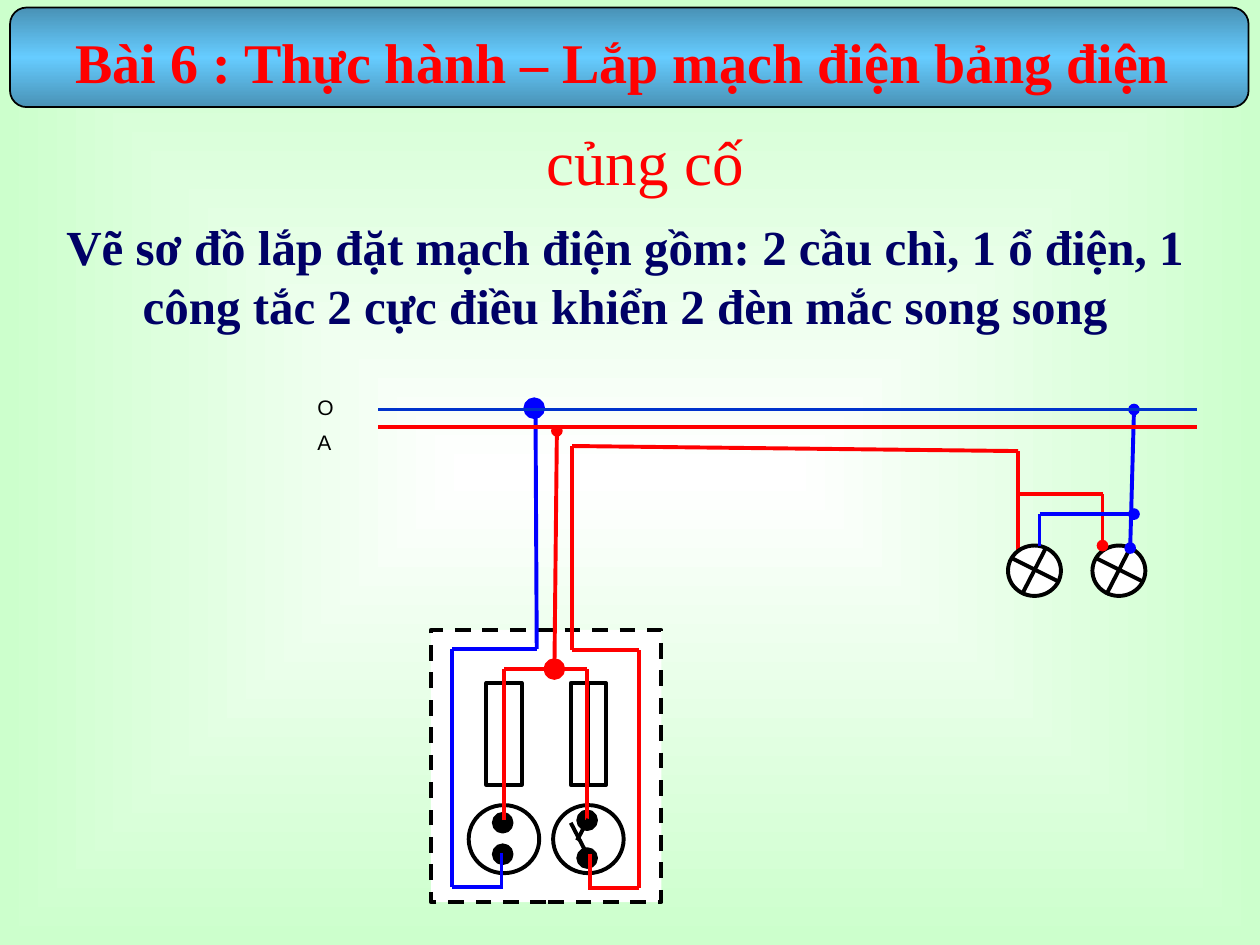
from dataclasses import dataclass
from itertools import pairwise
from typing import Any, NamedTuple

from lxml.etree import SubElement
from pptx import Presentation
from pptx.dml.color import RGBColor
from pptx.enum.dml import MSO_LINE
from pptx.enum.shapes import MSO_CONNECTOR, MSO_SHAPE
from pptx.enum.text import PP_ALIGN
from pptx.oxml.ns import qn
from pptx.util import Inches, Pt


@dataclass(frozen=True)
class Theme:
    black: str = "000000"
    white: str = "FFFFFF"
    red: str = "FF0000"
    blue: str = "0000FF"
    mains_blue: str = "0033CC"
    navy: str = "000066"
    mint: str = "CCFFCC"
    steel: str = "4992B6"
    sky: str = "66CCFF"
    serif: str = "Times New Roman"
    sans: str = "Arial"
    title_size: float = 32
    heading_size: float = 36
    task_size: float = 28
    label_size: float = 12
    stroke: float = 2.25
    thin_stroke: float = 1.5
    frame_stroke: float = 1


THEME = Theme()


class Point(NamedTuple):
    x: float
    y: float


class Area(NamedTuple):
    left: float
    top: float
    width: float
    height: float


class Wire(NamedTuple):
    color: str
    points: tuple[tuple[float, float], ...]
    head: bool = False
    tail: bool = False


@dataclass(frozen=True)
class Label:
    area: Area
    lines: tuple[str, ...]
    size: float
    color: str
    font: str = THEME.serif
    bold: bool = False
    align: PP_ALIGN = PP_ALIGN.CENTER
    wrap: bool = True
    margin_left: float = 0.1


LABELS = (
    Label(Area(0.17, 0.17, 9.83, 0.63), ("Bài 6 : Thực hành – Lắp mạch điện bảng điện",),
          THEME.title_size, THEME.red, bold=True, align=PP_ALIGN.JUSTIFY, margin_left=0.43),
    Label(Area(2.58, 0.92, 5.08, 0.66), ("củng cố",), THEME.heading_size, THEME.red, wrap=False),
    Label(Area(0.42, 1.67, 9.08, 1.03),
          ("Vẽ sơ đồ lắp đặt mạch điện gồm: 2 cầu chì, 1 ổ điện, 1 công tắc 2 cực "
           "điều khiển 2 đèn mắc song song",), THEME.task_size, THEME.navy, bold=True),
    Label(Area(2.42, 3.08, 0.67, 0.6), ("O", "A"), THEME.label_size, THEME.black,
          THEME.sans, align=PP_ALIGN.LEFT),
)

SUPPLY_WIRES = (
    Wire(THEME.blue, ((9, 3.25), (8.97, 4.35)), True, True),
    Wire(THEME.blue, ((4.25, 3.25), (4.26, 5.15), (3.59, 5.15), (3.59, 7.04), (3.99, 7.04))),
    Wire(THEME.red, ((4.42, 3.42), (4.4, 5.33)), True, True),
    Wire(THEME.red, ((8.08, 4.39), (8.08, 3.58), (4.54, 3.54), (4.54, 5.16),
                     (5.07, 5.16), (5.07, 7.05), (4.67, 7.05))),
)
MAINS_WIRES = (
    Wire(THEME.red, ((3, 3.39), (9.5, 3.39))),
    Wire(THEME.mains_blue, ((3, 3.25), (9.5, 3.25))),
)
BOARD_WIRES = (
    Wire(THEME.red, ((4, 6.51), (4, 5.31), (4.66, 5.31), (4.66, 6.51))),
    Wire(THEME.blue, ((3.98, 6.77), (3.98, 7.04))),
    Wire(THEME.red, ((4.68, 6.78), (4.68, 7.05))),
    Wire(THEME.black, ((4.58, 6.67), (4.67, 6.5))),
)
LAMP_WIRES = (
    Wire(THEME.red, ((8.08, 3.92), (8.75, 3.92), (8.75, 4.33)), tail=True),
    Wire(THEME.blue, ((8.25, 4.33), (8.25, 4.08), (9, 4.08)), tail=True),
)


def apply(target: Any, values: dict[str, Any]) -> None:
    for name, value in values.items():
        setattr(target, name, value)


def set_gradient(owner: Any, fill: Any, colors: tuple[str, ...], radial: bool = False) -> None:
    fill.gradient()
    gradient = next(owner.iter(qn("a:gradFill")))
    for child in list(gradient):
        gradient.remove(child)
    stops = SubElement(gradient, qn("a:gsLst"))
    for index, color in enumerate(colors):
        position = 100000 * index // (len(colors) - 1)
        stop = SubElement(stops, qn("a:gs"), pos=str(position))
        SubElement(stop, qn("a:srgbClr"), val=color)
    if radial:
        shade = SubElement(gradient, qn("a:path"), {"path": "shape"})
        SubElement(shade, qn("a:fillToRect"), dict.fromkeys("ltrb", "50000"))
    else:
        SubElement(gradient, qn("a:lin"), ang="5400000", scaled="1")


def add_figure(page: Any, kind: MSO_SHAPE, area: Area, fill: str = THEME.white,
               line: str = THEME.black, width: float = THEME.stroke) -> Any:
    figure = page.shapes.add_shape(kind, *map(Inches, area))
    figure.shadow.inherit = False
    figure.fill.solid()
    figure.fill.fore_color.rgb = RGBColor.from_string(fill)
    figure.line.color.rgb = RGBColor.from_string(line)
    figure.line.width = Pt(width)
    return figure


def add_line(page: Any, start: Point, end: Point, color: str = THEME.black,
             width: float = THEME.stroke, head: bool = False, tail: bool = False) -> Any:
    line = page.shapes.add_connector(MSO_CONNECTOR.STRAIGHT, *map(Inches, (*start, *end)))
    line.line.color.rgb = RGBColor.from_string(color)
    line.line.width = Pt(width)
    properties = line._element.spPr
    for shown, tag in ((head, "a:headEnd"), (tail, "a:tailEnd")):
        if shown:
            SubElement(properties.find(qn("a:ln")), qn(tag), type="oval")
    SubElement(properties, qn("a:effectLst"))
    return line


def add_wires(page: Any, wires: tuple[Wire, ...]) -> None:
    for wire in wires:
        last = len(wire.points) - 2
        for index, (start, end) in enumerate(pairwise(wire.points)):
            add_line(page, Point(*start), Point(*end), wire.color,
                     head=wire.head and index == 0, tail=wire.tail and index == last)


def add_dot(page: Any, center: Point, color: str = THEME.black) -> None:
    area = Area(center.x - 0.07, center.y - 0.07, 0.14, 0.14)
    add_figure(page, MSO_SHAPE.OVAL, area, color, color)


def add_lamp(page: Any, left: float, top: float = 4.33) -> None:
    add_figure(page, MSO_SHAPE.OVAL, Area(left, top, 0.42, 0.4))
    add_line(page, Point(left + 0.03, top + 0.1), Point(left + 0.39, top + 0.28))
    add_line(page, Point(left + 0.3, top + 0.02), Point(left + 0.11, top + 0.39))


def add_fuse(page: Any, center_x: float) -> None:
    fuse = add_figure(page, MSO_SHAPE.RECTANGLE, Area(center_x - 0.14, 5.42, 0.28, 0.81))
    line = add_line(page, Point(center_x, 5.42), Point(center_x, 6.23), width=THEME.thin_stroke)
    line.begin_connect(fuse, 0)
    line.end_connect(fuse, 2)


def add_device(page: Any, center_x: float, contacts: tuple[float, float],
               switch: bool = False) -> None:
    add_figure(page, MSO_SHAPE.OVAL, Area(center_x - 0.28, 6.39, 0.56, 0.54))
    if switch:
        add_line(page, Point(center_x, 6.8), Point(center_x - 0.14, 6.53))
    for contact in contacts:
        add_dot(page, Point(center_x - 0.01, contact))


def add_label(page: Any, label: Label) -> None:
    box = page.shapes.add_textbox(*map(Inches, label.area))
    frame = box.text_frame
    apply(frame, {"word_wrap": label.wrap, "margin_left": Inches(label.margin_left)})
    for index, text in enumerate(label.lines):
        para = frame.add_paragraph() if index else frame.paragraphs[0]
        apply(para, {"alignment": label.align, "space_before": Pt(label.size / 2 if index else 0)})
        span = para.add_run()
        span.text = text
        apply(span.font, {"name": label.font, "size": Pt(label.size), "bold": label.bold})
        span.font.color.rgb = RGBColor.from_string(label.color)


def main() -> None:
    """Build the lesson slide with its wiring diagram."""
    deck = Presentation()
    apply(deck, {"slide_width": Inches(10), "slide_height": Inches(7.5)})
    page = deck.slides.add_slide(deck.slide_layouts[6])
    set_gradient(page._element, page.background.fill, (THEME.white, THEME.mint), radial=True)
    banner = add_figure(page, MSO_SHAPE.ROUNDED_RECTANGLE, Area(0.08, 0.06, 9.83, 0.79),
                        width=THEME.frame_stroke)
    set_gradient(banner._element, banner.fill, (THEME.steel, THEME.sky, THEME.steel))
    for label in LABELS:
        add_label(page, label)
    board = add_figure(page, MSO_SHAPE.RECTANGLE, Area(3.42, 5, 1.83, 2.16))
    board.line.dash_style = MSO_LINE.DASH
    add_lamp(page, 8.67)
    add_wires(page, SUPPLY_WIRES)
    for center_x in (4.67, 4):
        add_fuse(page, center_x)
    add_device(page, 4, (6.53, 6.78))
    add_device(page, 4.67, (6.51, 6.81), switch=True)
    add_dot(page, Point(4.4, 5.31), THEME.red)
    add_dot(page, Point(4.24, 3.24), THEME.blue)
    add_wires(page, MAINS_WIRES + BOARD_WIRES)
    add_lamp(page, 8)
    add_wires(page, LAMP_WIRES)
    deck.save("out.pptx")


if __name__ == "__main__":
    main()
